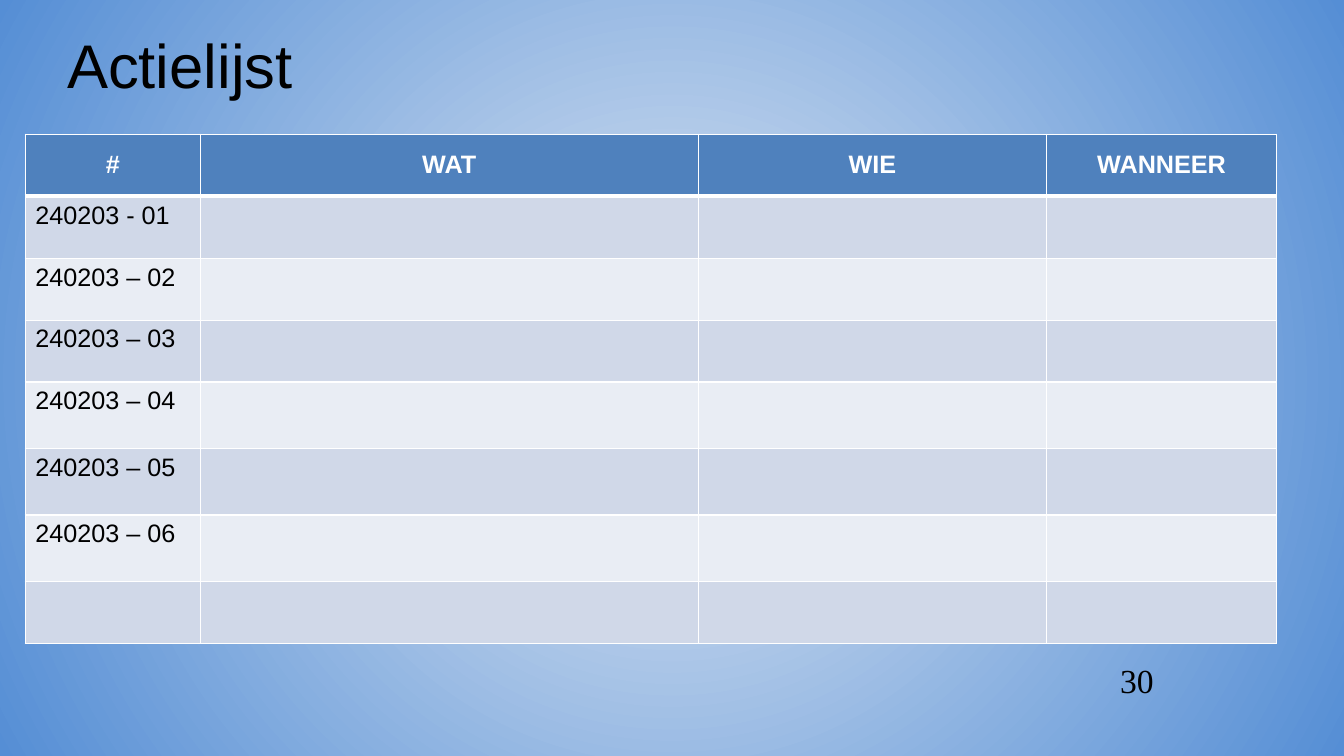
from pptx import Presentation
from pptx.dml.color import RGBColor
from pptx.enum.text import MSO_ANCHOR, PP_ALIGN
from pptx.oxml import parse_xml
from pptx.oxml.ns import nsdecls
from pptx.util import Pt

COLORS = {
    "center": "DCE6F2", "edge": "558ED5", "header": "4F81BD",
    "odd": "D0D8E8", "even": "E9EDF4", "white": "FFFFFF", "black": "000000",
}
HEADERS = ["#", "WAT", "WIE", "WANNEER"]
ACTIONS = ["240203 - 01"] + [f"240203 – {number:02}" for number in range(2, 7)] + [""]
COLUMN_WIDTHS = [125.2, 355.8, 249.2, 164]
ROW_HEIGHTS = [44.3] * 4 + [47.5] * 3 + [44.3]


def set_font(paragraph, size, color, name="Arial", bold=False):
    font = paragraph.font
    font.size, font.name, font.bold = Pt(size), name, bold
    font.color.rgb = RGBColor.from_string(COLORS[color])


def add_border(cell, side, width):
    cell._tc.get_or_add_tcPr().append(parse_xml(
        f'<a:{side} {nsdecls("a")} w="{Pt(width)}"><a:solidFill>'
        f'<a:srgbClr val="{COLORS["white"]}"/></a:solidFill></a:{side}>'))


presentation = Presentation()
presentation.slide_width, presentation.slide_height = Pt(960.5), Pt(540)
slide = presentation.slides.add_slide(presentation.slide_layouts[5])

# Background: circular gradient from the centre
background = slide.background.fill
background.gradient()
for stop, color, position in zip(background.gradient_stops, ("center", "edge"), (0, 1)):
    stop.color.rgb = RGBColor.from_string(COLORS[color])
    stop.position = position
linear = slide.element.xpath(".//p:bg//a:lin")[0]
linear.getparent().replace(linear, parse_xml(
    f'<a:path {nsdecls("a")} path="circle">'
    '<a:fillToRect l="50000" t="50000" r="50000" b="50000"/></a:path>'))

# Title
title = slide.shapes.title
title.left, title.top, title.width, title.height = Pt(48), Pt(21.6), Pt(864), Pt(58.3)
frame = title.text_frame
frame.text = "Actielijst"
frame.word_wrap = True
frame.vertical_anchor = MSO_ANCHOR.TOP
frame.margin_left = frame.margin_right = frame.margin_bottom = 0
frame.margin_top = Pt(3.6)
paragraph = frame.paragraphs[0]
paragraph.alignment = PP_ALIGN.LEFT
paragraph.line_spacing = 0.9
set_font(paragraph, 44, "black")

# Action table
table = slide.shapes.add_table(
    len(ROW_HEIGHTS), len(HEADERS), Pt(18), Pt(95.8),
    Pt(sum(COLUMN_WIDTHS)), Pt(sum(ROW_HEIGHTS))).table
for column, width in zip(table.columns, COLUMN_WIDTHS):
    column.width = Pt(width)
for row, height in zip(table.rows, ROW_HEIGHTS):
    row.height = Pt(height)

rows = [HEADERS] + [[action, "", "", ""] for action in ACTIONS]
for row_index, texts in enumerate(rows):
    is_header = row_index == 0
    fill_color = "header" if is_header else "odd" if row_index % 2 else "even"
    for column_index, text in enumerate(texts):
        cell = table.cell(row_index, column_index)
        cell.text = text
        paragraph = cell.text_frame.paragraphs[0]
        set_font(paragraph, 18, "white" if is_header else "black", bold=is_header)
        if is_header:
            paragraph.alignment = PP_ALIGN.CENTER
            cell.vertical_anchor = MSO_ANCHOR.MIDDLE
        for side in ("lnL", "lnR", "lnT", "lnB"):
            thick = (row_index, side) in ((0, "lnB"), (1, "lnT"))
            add_border(cell, side, 3 if thick else 1)
        cell.fill.solid()
        cell.fill.fore_color.rgb = RGBColor.from_string(COLORS[fill_color])

# Page number
page_number = slide.shapes.add_textbox(Pt(793.4), Pt(468), Pt(123.1), Pt(33.8))
page_number.text_frame.word_wrap = True
page_number.text_frame.text = "30"
set_font(page_number.text_frame.paragraphs[0], 24, "black", "Times New Roman")

presentation.save("out.pptx")
